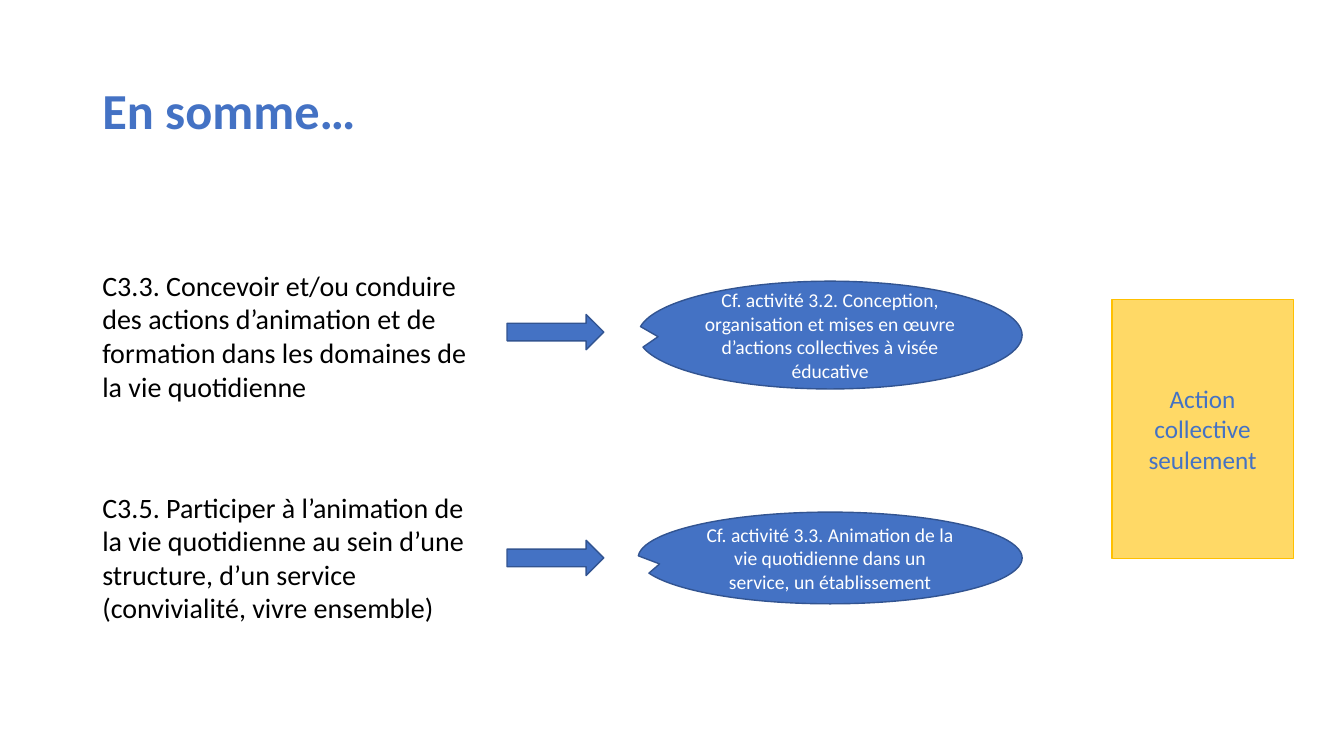
from pptx import Presentation
from pptx.dml.color import RGBColor
from pptx.enum import shapes, text
from pptx.util import Pt

COLORS = {
    "blue": "4472C4",
    "outline": "325491",
    "yellow": "FFD966",
    "gold": "FFC000",
    "black": "000000",
    "white": "FFFFFF",
}
FONT = "Calibri"
TITLE = "En somme…"
CONCLUSION = "Action collective seulement"
ROWS = [
    {
        "skill": "C3.3. Concevoir et/ou conduire des actions d’animation et de formation "
                 "dans les domaines de la vie quotidienne",
        "activity": "Cf. activité 3.2. Conception, organisation et mises en œuvre "
                    "d’actions collectives à visée éducative",
        "skill_top": 188,
        "arrow_top": 224.6,
        "callout_top": 200.9,
        "callout_height": 77,
        "pointer": (-0.448, 0.015),
    },
    {
        "skill": "C3.5. Participer à l’animation de la vie quotidienne au sein d’une "
                 "structure, d’un service (convivialité, vivre ensemble)",
        "activity": "Cf. activité 3.3. Animation de la vie quotidienne dans un service, "
                    "un établissement",
        "skill_top": 346.5,
        "arrow_top": 385.9,
        "callout_top": 365.8,
        "callout_height": 65.5,
        "pointer": (-0.444, 0.065),
    },
]


def color(name):
    return RGBColor.from_string(COLORS[name])


def write(shape, content, size, ink, centered=False, middle=True, bold=False):
    frame = shape.text_frame
    frame.word_wrap = True
    frame.vertical_anchor = text.MSO_ANCHOR.MIDDLE if middle else text.MSO_ANCHOR.TOP
    paragraph = frame.paragraphs[0]
    paragraph.alignment = text.PP_ALIGN.CENTER if centered else text.PP_ALIGN.LEFT
    run = paragraph.add_run()
    run.text = content
    run.font.name = FONT
    run.font.size = Pt(size)
    run.font.bold = bold
    run.font.color.rgb = color(ink)
    return paragraph


def add_text(slide, box, content, size, ink, **style):
    shape = slide.shapes.add_textbox(*map(Pt, box))
    return write(shape, content, size, ink, **style)


def add_figure(slide, kind, box, fill="blue", line="outline"):
    shape = slide.shapes.add_shape(kind, *map(Pt, box))
    shape.shadow.inherit = False
    shape.fill.solid()
    shape.fill.fore_color.rgb = color(fill)
    shape.line.color.rgb = color(line)
    shape.line.width = Pt(1)
    return shape


def add_row(slide, row):
    add_text(slide, (66, row["skill_top"], 281.5, 104.4), row["skill"], 20, "black",
             middle=False)
    add_figure(slide, shapes.MSO_SHAPE.RIGHT_ARROW, (362.2, row["arrow_top"], 69.1, 25.2))
    callout = add_figure(slide, shapes.MSO_SHAPE.OVAL_CALLOUT,
                         (455.8, row["callout_top"], 274.3, row["callout_height"]))
    for index, value in enumerate(row["pointer"]):
        callout.adjustments[index] = value
    write(callout, row["activity"], 14, "white", centered=True)


def main():
    presentation = Presentation()
    presentation.slide_width, presentation.slide_height = Pt(960), Pt(540)
    slide = presentation.slides.add_slide(presentation.slide_layouts[6])
    title = add_text(slide, (66, 28.8, 828, 104.4), TITLE, 36, "blue", bold=True)
    title.line_spacing = 0.9
    for row in ROWS:
        add_row(slide, row)
    conclusion = add_figure(slide, shapes.MSO_SHAPE.RECTANGLE, (794.2, 213.8, 129.6, 185),
                            "yellow", "gold")
    write(conclusion, CONCLUSION, 18, "blue", centered=True)
    presentation.save("out.pptx")


if __name__ == "__main__":
    main()
